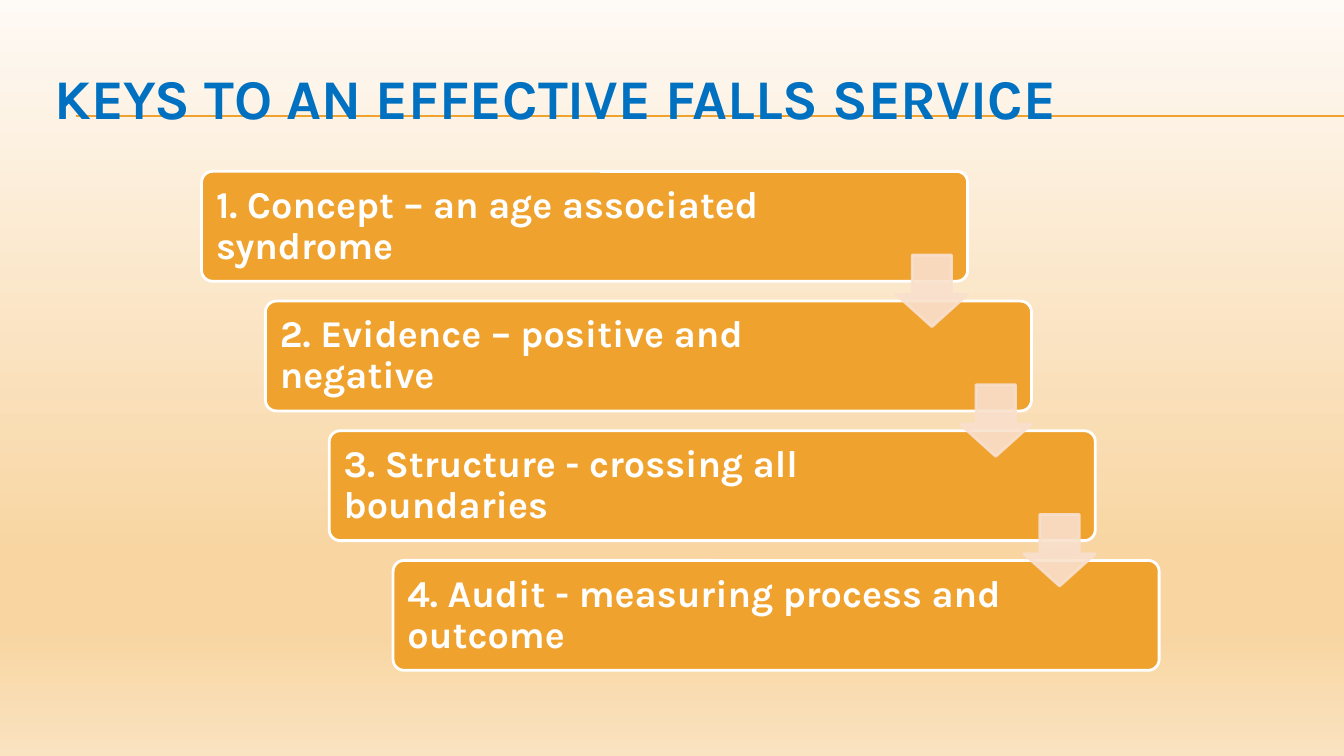
from lxml.etree import SubElement
from pptx import Presentation
from pptx.dml.color import RGBColor
from pptx.enum.shapes import MSO_CONNECTOR, MSO_SHAPE
from pptx.enum.text import MSO_ANCHOR, PP_ALIGN
from pptx.oxml.ns import qn
from pptx.util import Pt

PAGE = (960, 540)
STOPS = [(0, "FEFAF5"), (74, "F8D5A1"), (83, "F8D5A1"), (100, "FAE3C0")]
ORANGE, BLUE, WHITE, PEACH = "F0A22E", "0070C0", "FFFFFF", "F9E0CD"
FRAME = {"word_wrap": True, "vertical_anchor": MSO_ANCHOR.MIDDLE}
INSETS = {f"margin_{side}": Pt(8) for side in ("left", "top", "right", "bottom")}
TITLE_FONT = {"name": "Karla", "size": Pt(40), "bold": True}
KEY_FONT = {"name": "Karla", "size": Pt(27), "bold": True}
KEYS = [
    ("1. Concept – an age associated syndrome", 456),
    ("2. Evidence – positive and negative", 446),
    ("3. Structure - crossing all boundaries", 446),
    ("4. Audit - measuring process and outcome", 446),
]


def paint(color_format, color):
    """Give a colour format the colour of a hex string."""
    color_format.rgb = RGBColor.from_string(color)


def apply(target, values):
    """Set every attribute named in a dict."""
    for name, value in values.items():
        setattr(target, name, value)


def points(box):
    """Turn a box of numbers into lengths."""
    return [Pt(value) for value in box]


def write(frame, text, font, color, paragraph):
    """Fill a text frame with one formatted paragraph."""
    apply(frame, FRAME)
    para = frame.paragraphs[0]
    apply(para, paragraph)
    span = para.add_run()
    span.text = text
    apply(span.font, font)
    paint(span.font.color, color)


def add_solid(page, preset, box, adjustments, fill, line, opacity=100):
    """Add a filled preset shape with a 2 point outline."""
    shape = page.shapes.add_shape(preset, *points(box))
    shape.shadow.inherit = False
    for index, value in enumerate(adjustments):
        shape.adjustments[index] = value
    shape.fill.solid()
    paint(shape.fill.fore_color, fill)
    paint(shape.line.color, line)
    shape.line.width = Pt(2)
    if opacity < 100:
        for color in shape._element.spPr.iter(qn("a:srgbClr")):
            SubElement(color, qn("a:alpha"), val=str(opacity * 1000))


def add_background(page):
    """Paint the vertical gradient behind the page."""
    fill = page.background.fill
    fill.gradient()
    fill.gradient_angle = 270
    stops = page._element.find(".//" + qn("a:gsLst"))
    for stop in list(stops):
        stops.remove(stop)
    for position, color in STOPS:
        stop = SubElement(stops, qn("a:gs"), pos=str(position * 1000))
        SubElement(stop, qn("a:srgbClr"), val=color)


def add_heading(page, box):
    """Place the title and the double rule that runs behind it."""
    left, top, width, height = box
    for offset in (46.8, 47.5):
        ends = points((left + 22.3, top + offset, PAGE[0], top + offset))
        rule = page.shapes.add_connector(MSO_CONNECTOR.STRAIGHT, *ends)
        paint(rule.line.color, ORANGE)
        rule.line.width = Pt(0.75)
        SubElement(rule._element.spPr, qn("a:effectLst"))
    title = page.shapes.title
    apply(title, dict(zip(("left", "top", "width", "height"), points(box))))
    write(title.text_frame, "KEYS TO AN EFFECTIVE FALLS SERVICE", TITLE_FONT,
          BLUE, {"alignment": PP_ALIGN.LEFT})
    page.shapes._spTree.append(title._element)


def add_staircase(page, box):
    """Place the keys as descending cards linked by block arrows."""
    left, top, width, height = box
    card_width, card_height, arrow = 547.2, 78.5, 51.1
    steps = len(KEYS) - 1
    step_x = (width - card_width) / steps
    step_y = (height - card_height) / steps
    corners = [(left + i * step_x, top + i * step_y) for i in range(len(KEYS))]
    for (x, y), (text, text_width) in zip(corners, KEYS):
        add_solid(page, MSO_SHAPE.ROUNDED_RECTANGLE,
                  (x, y, card_width, card_height), [0.1], ORANGE, WHITE)
        label = page.shapes.add_textbox(
            *points((x + 2.3, y + 2.3, text_width, card_height - 4.6)))
        apply(label.text_frame, INSETS)
        write(label.text_frame, text, KEY_FONT, WHITE,
              {"alignment": PP_ALIGN.LEFT, "line_spacing": 0.9})
    for x, y in corners[:-1]:
        add_solid(page, MSO_SHAPE.DOWN_ARROW,
                  (x + card_width - arrow, y + 59.8, arrow, arrow),
                  [0.55, 0.45], PEACH, PEACH, 90)


def main():
    """Build and save the deck."""
    deck = Presentation()
    deck.slide_width, deck.slide_height = points(PAGE)
    page = deck.slides.add_slide(deck.slide_layouts[5])
    add_background(page)
    add_heading(page, (31.7, 36, 912.2, 66.2))
    add_staircase(page, (144, 122.4, 684, 356.4))
    deck.save("out.pptx")


if __name__ == "__main__":
    main()
